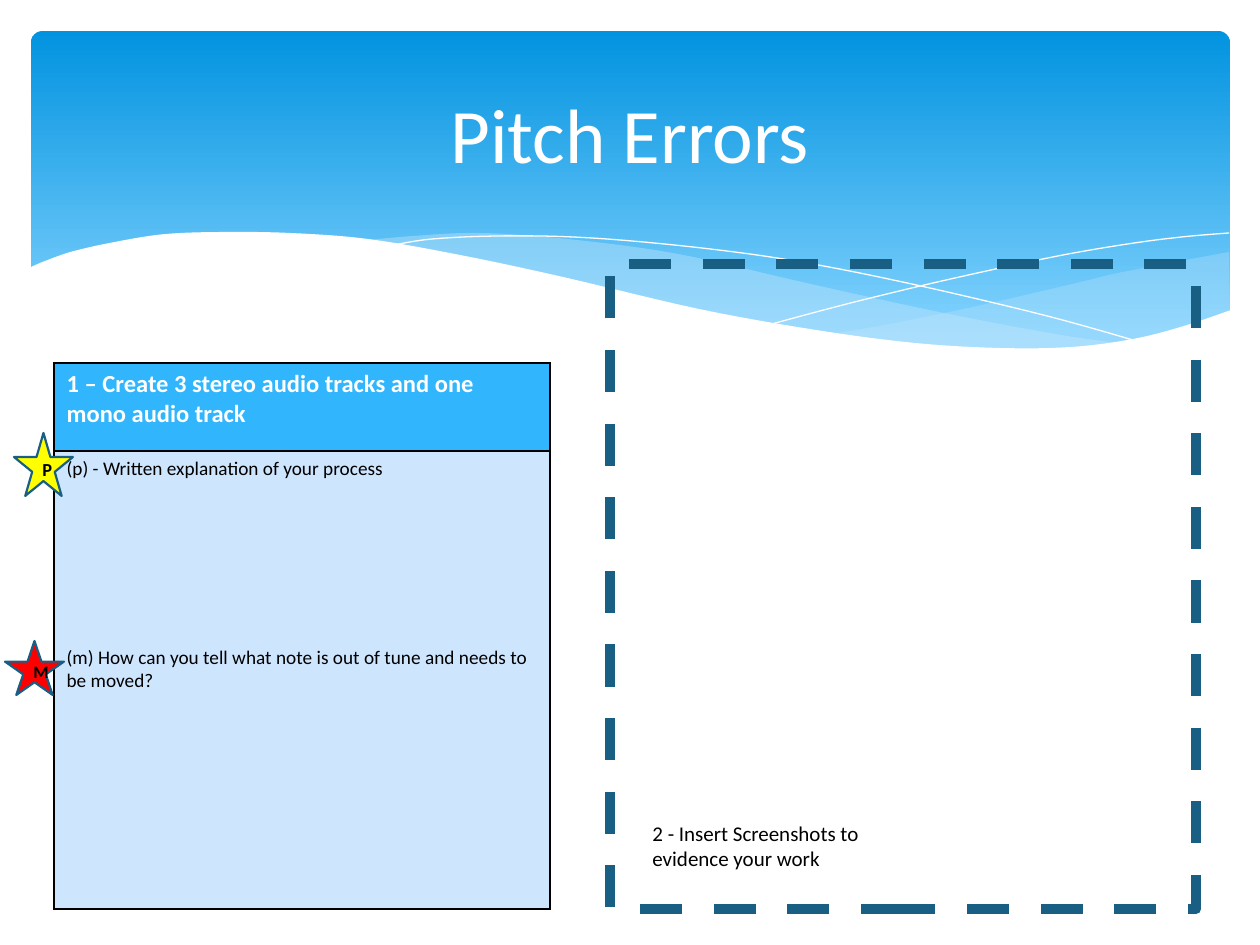
from lxml import etree
from pptx import Presentation
from pptx import util as u
from pptx.dml.color import RGBColor
from pptx.enum import dml, shapes, text
from pptx.oxml import ns

PX = 914400 / 126
WHITE = RGBColor(0xFF, 0xFF, 0xFF)
BLACK = RGBColor(0, 0, 0)
SKY_TOP = RGBColor(0x02, 0x93, 0xE0)
SKY_END = RGBColor(0x83, 0xD3, 0xFE)
MIST = RGBColor(0xC6, 0xE7, 0xFC)
NAVY = RGBColor(0x19, 0x5F, 0x84)
HEAD = RGBColor(0x31, 0xB6, 0xFD)
BODY = RGBColor(0xCE, 0xE5, 0xFE)
RED = RGBColor(0xFF, 0, 0)
YELLOW = RGBColor(0xFF, 0xFF, 0)


def box(*px):
    """Turn px lengths into EMU."""
    return [round(n * PX) for n in px]


def curve(pts, steps=6):
    """Sample a Catmull-Rom curve through the points."""
    ends = [pts[0], *pts, pts[-1]]
    out = [pts[0]]
    for a, b, c, d in zip(ends, ends[1:], ends[2:], ends[3:]):
        for i in range(1, steps + 1):
            t = i / steps
            out.append(tuple(
                (2 * q + (r - p) * t + (2 * p - 5 * q + 4 * r - s) * t ** 2
                 + (3 * q - p - 3 * r + s) * t ** 3) / 2
                for p, q, r, s in zip(a, b, c, d)))
    return out


prs = Presentation()
prs.slide_width, prs.slide_height = box(1260, 945)
slide = prs.slides.add_slide(prs.slide_layouts[5])
tree = slide.shapes

# Blue banner
sky = tree.add_shape(shapes.MSO_SHAPE.ROUNDED_RECTANGLE, *box(31, 31, 1199, 340))
sky.adjustments[0] = 0.034
sky.shadow.inherit = False
sky.line.fill.background()
sky.fill.gradient()
sky.fill.gradient_angle = 270
for stop, pos, tint in zip(sky.fill.gradient_stops, (0, 0.9), (SKY_TOP, SKY_END)):
    stop.position = pos
    stop.color.rgb = tint

# Waves: each is a list of smooth edges, a fill colour and an opacity in percent
right = [
    [(1229, 252), (1123, 272), (1085, 281), (982, 305), (890, 324), (833, 334)],
    [(833, 334), (922, 345), (998, 349), (1076, 348), (1140, 339), (1187, 326),
     (1230, 311)]]
left = [
    [(1125, 344), (1055, 334), (934, 311), (793, 280), (717, 262), (648, 249),
     (557, 238), (479, 233), (413, 236), (360, 241)],
    [(360, 241), (456, 256), (566, 280), (713, 312), (819, 333), (910, 345),
     (1003, 350), (1068, 349), (1125, 344)]]
fall = [[(389, 246), (433, 239), (505, 236), (591, 238), (701, 248), (801, 262),
         (916, 285), (1047, 316), (1143, 343)]]
rise = [[(772, 324), (847, 304), (942, 281), (1053, 257), (1128, 244),
         (1182, 237), (1229, 233)]]
front = [
    [(1231, 310), (1184, 326), (1133, 339), (1071, 347), (1000, 348), (915, 343),
     (816, 330), (699, 309), (563, 277), (460, 255), (368, 239), (290, 233),
     (223, 232), (166, 234), (120, 241), (74, 251), (45, 261), (29, 268)],
    [(29, 415), (1231, 415)]]
for edges, tint, alpha in ((right, MIST, 29), (left, MIST, 40), (fall, None, 100),
                           (rise, None, 100), (front, WHITE, 100)):
    pts = [box(*p) for edge in edges for p in curve(edge)]
    pen = tree.build_freeform(*pts[0], scale=1.0)
    pen.add_line_segments(pts[1:], close=tint is not None)
    wave = pen.convert_to_shape()
    wave.shadow.inherit = False
    if tint is None:
        wave.fill.background()
        wave.line.color.rgb = WHITE
        wave.line.width = 0
        continue
    wave.line.fill.background()
    wave.fill.solid()
    wave.fill.fore_color.rgb = tint
    if alpha < 100:
        clr = wave.fill._xPr.find(".//" + ns.qn("a:srgbClr"))
        etree.SubElement(clr, ns.qn("a:alpha"), val=str(alpha * 1000))

# Title, brought in front of the banner
title = tree.title
tree._spTree.append(title._element)
title.left, title.top, title.width, title.height = box(63, 47, 1134, 172)
title.text_frame.text = "Pitch Errors"
title.text_frame.vertical_anchor = text.MSO_ANCHOR.MIDDLE
para = title.text_frame.paragraphs[0]
para.alignment = text.PP_ALIGN.CENTER
font = para.runs[0].font
font.size, font.name, font.color.rgb = u.Pt(44), "Calibri", WHITE

# Task table
table = tree.add_table(2, 1, *box(54, 363, 496, 546)).table
rows = (
    (88, HEAD, WHITE, 14, True,
     ["1 – Create 3 stereo audio tracks and one mono audio track"]),
    (458, BODY, BLACK, 11, False,
     ["(p) - Written explanation of your process",
      "(m) How can you tell what note is out of tune and needs to be moved?"]))
for i, (high, fill, ink, size, bold, lines) in enumerate(rows):
    table.rows[i].height = box(high)[0]
    cell = table.cell(i, 0)
    cell.text_frame.text = "\n".join(lines)
    for para in cell.text_frame.paragraphs:
        font = para.runs[0].font
        font.size, font.name, font.bold = u.Pt(size), "Calibri", bold
        font.color.rgb = ink
    for para in cell.text_frame.paragraphs[1:]:
        para.space_before = u.Pt(94)
    props = cell._tc.get_or_add_tcPr()
    for side in ("lnL", "lnR", "lnT", "lnB"):
        edge = etree.SubElement(props, ns.qn("a:" + side), w="12700")
        solid = etree.SubElement(edge, ns.qn("a:solidFill"))
        etree.SubElement(solid, ns.qn("a:srgbClr"), val=str(BLACK))
    cell.fill.solid()
    cell.fill.fore_color.rgb = fill

# Screenshot area
area = tree.add_group_shape().shapes
frame = area.add_shape(shapes.MSO_SHAPE.RECTANGLE, *box(610, 264, 586, 645))
frame.shadow.inherit = False
frame.fill.background()
frame.line.color.rgb = NAVY
frame.line.width = u.Pt(6)
frame.line.dash_style = dml.MSO_LINE.DASH
note = area.add_textbox(*box(640, 814, 297, 63)).text_frame
note.word_wrap = True
note.auto_size = text.MSO_AUTO_SIZE.SHAPE_TO_FIT_TEXT
note.text = "2 - Insert Screenshots to evidence your work"
font = note.paragraphs[0].runs[0].font
font.size, font.name, font.color.rgb = u.Pt(12), "Calibri", BLACK

# Grade stars
for mark, fill, size, place in (("M", RED, 10, (5, 641, 59, 54)),
                                ("P", YELLOW, 10.5, (14, 433, 59, 63))):
    star = tree.add_shape(shapes.MSO_SHAPE.STAR_5_POINT, *box(*place))
    star.shadow.inherit = False
    star.fill.solid()
    star.fill.fore_color.rgb = fill
    star.line.color.rgb = NAVY
    star.line.width = u.Pt(1.25)
    star.text_frame.text = mark
    star.text_frame.vertical_anchor = text.MSO_ANCHOR.MIDDLE
    para = star.text_frame.paragraphs[0]
    para.alignment = text.PP_ALIGN.CENTER
    font = para.runs[0].font
    font.size, font.name, font.bold = u.Pt(size), "Calibri", True
    font.color.rgb = BLACK

prs.save("out.pptx")
